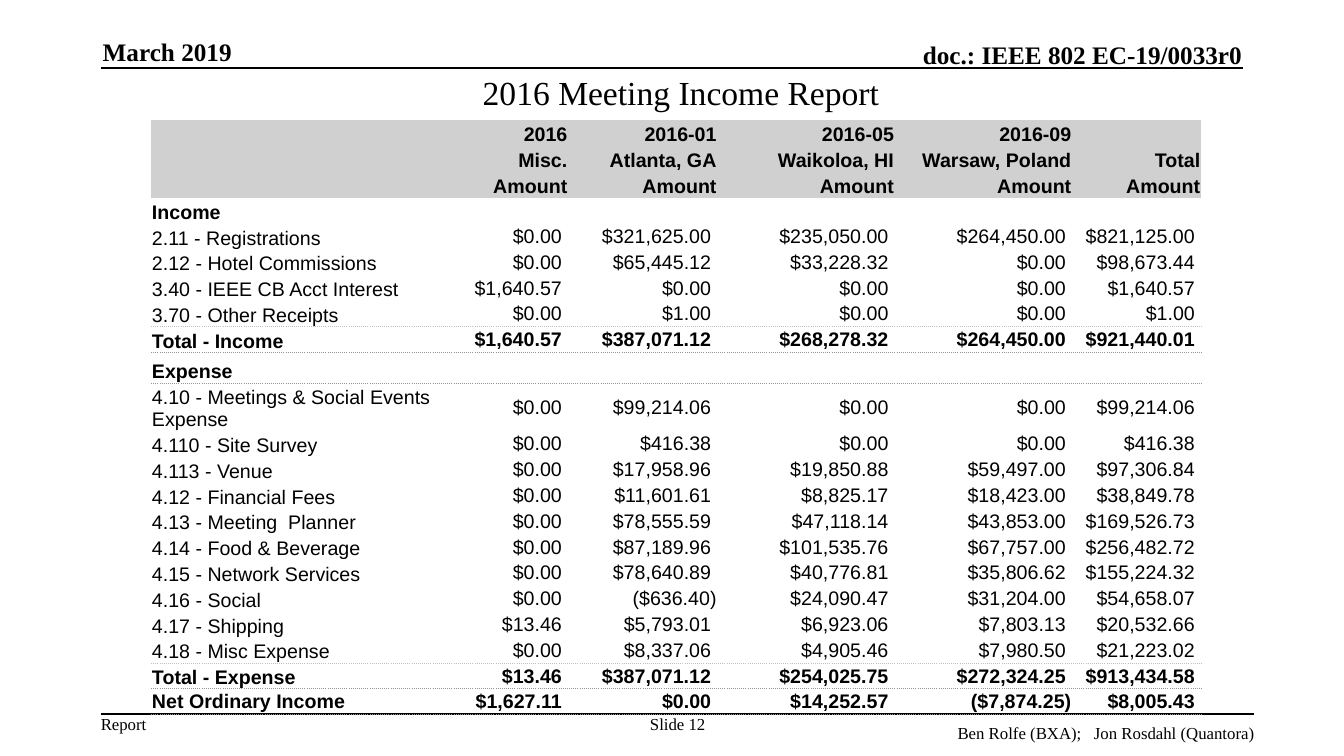
from dataclasses import dataclass
from lxml.etree import SubElement
from pptx import Presentation
from pptx.dml.color import RGBColor
from pptx.enum.text import MSO_ANCHOR, PP_ALIGN
from pptx.oxml.ns import qn
from pptx.util import Cm, Pt


@dataclass(frozen=True)
class Theme:
    ink: str = "000000"
    band: str = "D0D0D0"
    pale: str = "C0C0C0"
    dark: str = "969696"
    serif: str = "Times New Roman"
    sans: str = "Arial"
    title: int = 24
    head: int = 18
    body: int = 14
    foot: int = 12
    rule: float = 1
    dots: float = 0.5
    plain: str = "{2D5ABB26-0587-4C30-8999-92F81FD0307C}"


THEME = Theme()
LEFT, MID, RIGHT = PP_ALIGN.LEFT, PP_ALIGN.CENTER, PP_ALIGN.RIGHT
TOP, CORE, BASE = MSO_ANCHOR.TOP, MSO_ANCHOR.MIDDLE, MSO_ANCHOR.BOTTOM

WIDTHS = 7.82, 2.69, 3.76, 4.47, 4.47, 3.25
ROW = 0.65
TALL = {"Expense": 0.77, "4.10 - Meetings & Social Events Expense": 1.2}

HEADS = [
    ["", "2016", "2016-01", "2016-05", "2016-09", "Total"],
    ["", "Misc.", "Atlanta, GA", "Waikoloa, HI", "Warsaw, Poland", ""],
    [""] + ["Amount"] * 5,
]
INCOME = {
    "2.11 - Registrations": (0, 321625, 235050, 264450),
    "2.12 - Hotel Commissions": (0, 65445.12, 33228.32, 0),
    "3.40 - IEEE CB Acct Interest": (1640.57, 0, 0, 0),
    "3.70 - Other Receipts": (0, 1, 0, 0),
}
EXPENSE = {
    "4.10 - Meetings & Social Events Expense": (0, 99214.06, 0, 0),
    "4.110 - Site Survey": (0, 416.38, 0, 0),
    "4.113 - Venue": (0, 17958.96, 19850.88, 59497),
    "4.12 - Financial Fees": (0, 11601.61, 8825.17, 18423),
    "4.13 - Meeting  Planner": (0, 78555.59, 47118.14, 43853),
    "4.14 - Food & Beverage": (0, 87189.96, 101535.76, 67757),
    "4.15 - Network Services": (0, 78640.89, 40776.81, 35806.62),
    "4.16 - Social": (0, -636.4, 24090.47, 31204),
    "4.17 - Shipping": (13.46, 5793.01, 6923.06, 7803.13),
    "4.18 - Misc Expense": (0, 8337.06, 4905.46, 7980.5),
}


def style(para, size, font, bold, align):
    para.alignment = align
    for run in para.runs:
        run.font.size = Pt(size)
        run.font.name = font
        run.font.bold = bold
        run.font.color.rgb = RGBColor.from_string(THEME.ink)


def add_text(slide, text, box, size, align=LEFT, bold=False, anchor=TOP,
             pad=(0, 0), wrap=True):
    frame = slide.shapes.add_textbox(*map(Cm, box)).text_frame
    frame.word_wrap = wrap
    frame.vertical_anchor = anchor
    frame.margin_left = frame.margin_right = Cm(pad[0])
    frame.margin_top = frame.margin_bottom = Cm(pad[1])
    frame.text = text
    style(frame.paragraphs[0], size, THEME.serif, bold, align)


def add_rule(slide, left, right, top):
    line = slide.shapes.add_connector(1, Cm(left), Cm(top), Cm(right), Cm(top))
    line.line.color.rgb = RGBColor.from_string(THEME.ink)
    line.line.width = Pt(THEME.rule)
    SubElement(line._element.spPr, qn("a:effectLst"))


def add_edge(cell, side, color):
    edge = SubElement(cell._tc.get_or_add_tcPr(), qn("a:" + side),
                      w=str(Pt(THEME.dots)))
    fill = SubElement(edge, qn("a:solidFill"))
    SubElement(fill, qn("a:srgbClr"), val=color)
    SubElement(edge, qn("a:prstDash"), val="sysDot")


def fill_cell(cell, text, bold, align, anchor, edges, band):
    cell.margin_left = cell.margin_right = cell.margin_top = Cm(0.02)
    cell.margin_bottom = Cm(0)
    cell.vertical_anchor = anchor
    para = cell.text_frame.paragraphs[0]
    if text:
        para.text = text
        style(para, THEME.body, THEME.sans, bold, align)
    else:
        SubElement(para._p, qn("a:endParaRPr"), sz=str(THEME.body * 100))
    for side, color in zip(("lnT", "lnB"), edges):
        if color:
            add_edge(cell, side, color)
    if band:
        cell.fill.solid()
        cell.fill.fore_color.rgb = RGBColor.from_string(THEME.band)
    else:
        cell.fill.background()


def money(value):
    text = f"${abs(value):,.2f}"
    return f"({text})" if round(value, 2) < 0 else text + " "


def totals(group):
    return [sum(column) for column in zip(*group.values())]


def entry(label, values):
    return [label, *map(money, values), money(sum(values))]


def section(name, group):
    rows = [entry(label, values) for label, values in group.items()]
    total = entry("Total - " + name, totals(group))
    return [[name] + [""] * 5, *rows, total]


def add_report(slide):
    net = [gain - cost for gain, cost in zip(totals(INCOME), totals(EXPENSE))]
    rows = [*HEADS, *section("Income", INCOME), *section("Expense", EXPENSE),
            entry("Net Ordinary Income", net)]
    sizes = [TALL.get(row[0], ROW) for row in rows]
    frame = slide.shapes.add_table(len(rows), len(WIDTHS), Cm(3.81), Cm(3.03),
                                   Cm(sum(WIDTHS)), Cm(sum(sizes)))
    table = frame.table
    table.first_row = table.horz_banding = False
    table._tbl.tblPr.find(qn("a:tableStyleId")).text = THEME.plain
    for column, width in zip(table.columns, WIDTHS):
        column.width = Cm(width)
    for line, size in zip(table.rows, sizes):
        line.height = Cm(size)

    ends = [row[0].startswith(("Total", "Net")) for row in rows]
    above = None
    for i, row in enumerate(rows):
        head = i < len(HEADS)
        bold = head or ends[i] or row[0] in ("Income", "Expense")
        if ends[i]:
            below = THEME.dark
        else:
            below = THEME.pale if ends[i + 1] else None
        for j, text in enumerate(row):
            label = j == 0 and not row[0].startswith("Net")
            fill_cell(table.cell(i, j), text, bold, RIGHT if j else LEFT,
                      BASE if head or label else CORE, (above, below), head)
        above = below
    for j in (0, len(WIDTHS) - 1):
        table.cell(0, j).merge(table.cell(1, j))


def main():
    deck = Presentation()
    deck.slide_width, deck.slide_height = Cm(33.87), Cm(19.05)
    slide = deck.slides.add_slide(deck.slide_layouts[6])
    add_rule(slide, 2.54, 31.33, 1.71)
    add_rule(slide, 2.54, 31.6, 17.99)
    add_text(slide, "March 2019", (2.59, 0.92, 6.93, 0.76), THEME.head,
             bold=True, anchor=BASE)
    add_text(slide, "doc.: IEEE 802 EC-19/0033r0", (13.26, 0.99, 18.04, 0.76),
             THEME.head, RIGHT, True, BASE)
    add_text(slide, "2016 Meeting Income Report", (6.35, 1.68, 21.62, 1.28),
             THEME.title, MID, pad=(0.25, 0.13))
    add_report(slide)
    add_text(slide, "Report", (2.54, 17.99, 1.17, 0.51), THEME.foot, wrap=False)
    add_text(slide, "Slide 12", (16.1, 17.99, 1.96, 1.02), THEME.foot, MID)
    add_text(slide, "Ben Rolfe (BXA);   Jon Rosdahl (Quantora)",
             (20.29, 18.2, 11.33, 0.51), THEME.foot, RIGHT)
    deck.save("out.pptx")


main()
